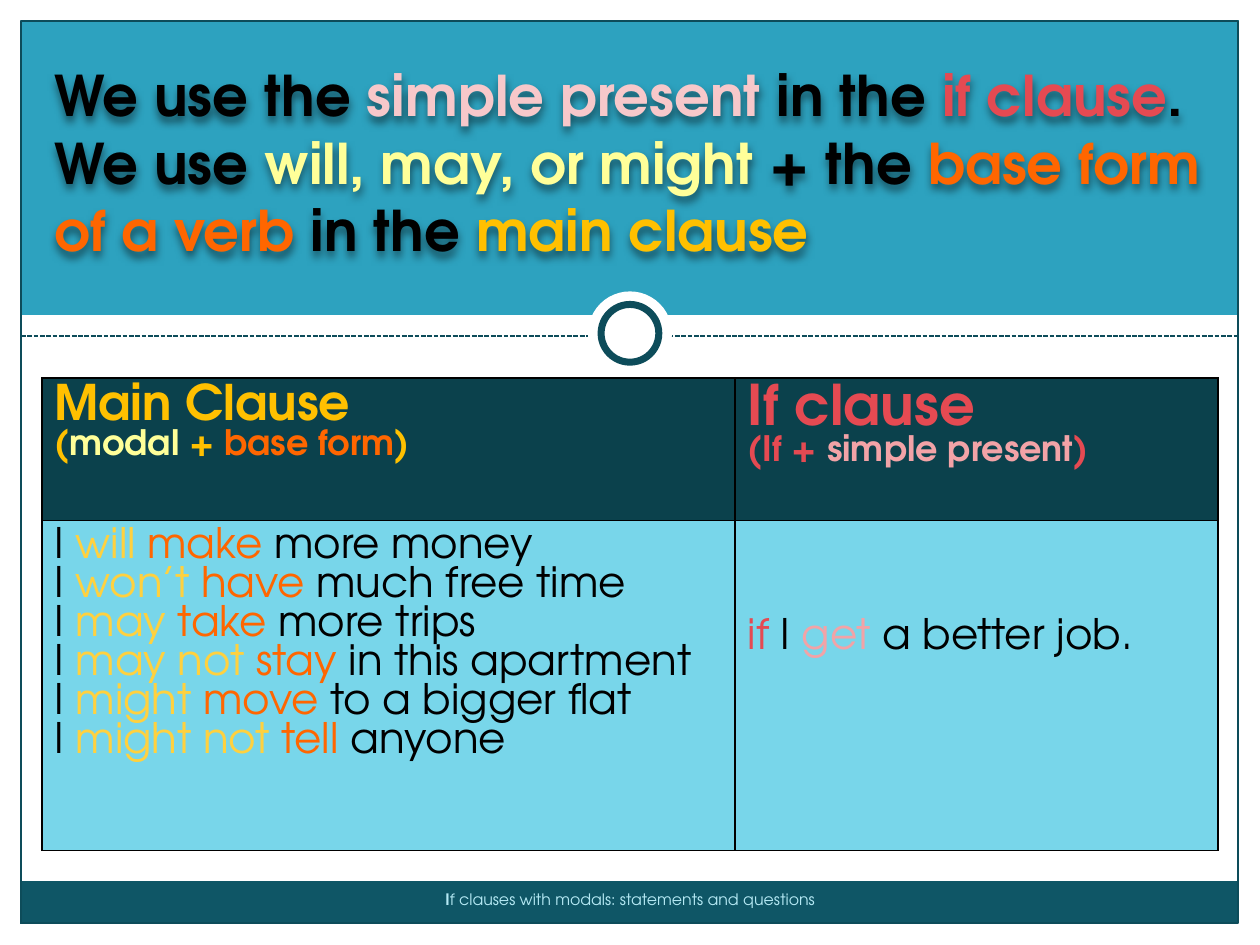
from lxml import etree
from pptx import Presentation
from pptx.dml.color import RGBColor
from pptx.enum.dml import MSO_LINE
from pptx.enum.shapes import MSO_CONNECTOR, MSO_SHAPE
from pptx.enum.text import PP_ALIGN
from pptx.oxml import parse_xml
from pptx.oxml.ns import nsdecls, qn
from pptx.util import Pt

RECT, OVAL = MSO_SHAPE.RECTANGLE, MSO_SHAPE.OVAL
STRAIGHT = MSO_CONNECTOR.STRAIGHT
DASH = MSO_LINE.SQUARE_DOT
CENTER = PP_ALIGN.CENTER
FONT = "TeX Gyre Adventor"

COLORS = {
    "white": "FFFFFF", "black": "000000", "banner": "2DA2BF",
    "footer": "0F5666", "edge": "0D4C5A", "head": "0B414C", "body": "78D6EA",
    "present": "F7C8CA", "get": "F2A3A7", "if": "E54A52",
    "modal": "FFFF99", "modal_body": "FFD13F", "verb": "FF6600",
    "main": "FFC000", "footer_text": "B5E9F4",
}

RULES = [
    [("We use the ", "black"), ("simple present ", "present"),
     ("in the ", "black"), ("if clause", "if"), (".", "black")],
    [("We use ", "black"), ("will, may, or might ", "modal"),
     ("+ the ", "black"), ("base form of a verb", "verb"),
     (" in the ", "black"), ("main clause", "main")],
]
MAIN_HEAD = [
    [("Main Clause", "main")],
    [("(", "main"), ("modal ", "modal"), ("+ ", "main"),
     ("base form", "verb"), (")", "main")],
]
IF_HEAD = [
    [("If clause", "if")],
    [("(If + ", "if"), ("simple present", "get"), (")", "if")],
]
EXAMPLES = [
    ("will ", "make", " more money"),
    ("won’t ", "have", " much free time"),
    ("may ", "take", " more trips"),
    ("may not ", "stay", " in this apartment"),
    ("might ", "move", " to a bigger flat"),
    ("might not ", "tell ", "anyone"),
]
IF_EXAMPLE = [[("if", "if"), (" I ", "black"), ("get", "get"),
               (" a better job.", "black")]]


def rgb(name):
    return RGBColor.from_string(COLORS[name])


def add_block(slide, kind, box, fill=None, line=None, width=0.75):
    block = slide.shapes.add_shape(kind, *map(Pt, box))
    block.shadow.inherit = False
    if fill:
        block.fill.solid()
        block.fill.fore_color.rgb = rgb(fill)
    else:
        block.fill.background()
    if line:
        block.line.color.rgb = rgb(line)
        block.line.width = Pt(width)
    else:
        block.line.fill.background()


def add_divider(slide, left, right, y):
    divider = slide.shapes.add_connector(STRAIGHT, Pt(left), Pt(y), Pt(right), Pt(y))
    divider.line.color.rgb = rgb("edge")
    divider.line.width = Pt(0.9)
    divider.line.dash_style = DASH
    etree.SubElement(divider._element.spPr, qn("a:effectLst"))


def write_lines(frame, lines, sizes, bold=False):
    """Fill a text frame with paragraphs of (text, colour) runs."""
    for i, (line, size) in enumerate(zip(lines, sizes)):
        paragraph = frame.paragraphs[0] if i == 0 else frame.add_paragraph()
        paragraph.font.name = FONT
        paragraph.font.size = Pt(size)
        paragraph.font.bold = bold
        for text, color in line:
            run = paragraph.add_run()
            run.text = text
            run.font.color.rgb = rgb(color)


def add_text(slide, box, lines, size, bold=False):
    text_box = slide.shapes.add_textbox(*map(Pt, box))
    text_box.text_frame.word_wrap = True
    write_lines(text_box.text_frame, lines, [size] * len(lines), bold)
    return text_box


def add_text_shadow(text_box):
    """An unfilled box casts its shadow from the letters."""
    text_box._element.spPr.append(parse_xml(
        f'<a:effectLst {nsdecls("a")}><a:outerShdw blurRad="50800" dist="38100" '
        f'dir="5400000" algn="t"><a:srgbClr val="{COLORS["black"]}">'
        '<a:alpha val="50000"/></a:srgbClr></a:outerShdw></a:effectLst>'))


def fill_cell(cell, fill, lines, sizes, bold=False, top=3.6):
    write_lines(cell.text_frame, lines, sizes, bold)
    cell.margin_top = Pt(top)
    properties = cell._tc.get_or_add_tcPr()
    for side in ("lnL", "lnR", "lnT", "lnB"):
        properties.append(parse_xml(
            f'<a:{side} {nsdecls("a")} w="12700"><a:solidFill>'
            f'<a:srgbClr val="{COLORS["black"]}"/></a:solidFill></a:{side}>'))
    cell.fill.solid()
    cell.fill.fore_color.rgb = rgb(fill)


def add_clause_table(slide):
    table = slide.shapes.add_table(2, 2, Pt(24), Pt(216), Pt(672), Pt(270)).table
    for column, width in zip(table.columns, (396, 276)):
        column.width = Pt(width)
    for row, height in zip(table.rows, (81.5, 188.5)):
        row.height = Pt(height)
    examples = [[("I ", "black"), (modal, "modal_body"), (verb, "verb"), (rest, "black")]
                for modal, verb, rest in EXAMPLES]
    fill_cell(table.cell(0, 0), "head", MAIN_HEAD, (28, 20), bold=True)
    fill_cell(table.cell(0, 1), "head", IF_HEAD, (32, 20), bold=True)
    fill_cell(table.cell(1, 0), "body", examples, [24] * len(examples))
    fill_cell(table.cell(1, 1), "body", IF_EXAMPLE, [24], top=56)


def main():
    prs = Presentation()
    prs.slide_width, prs.slide_height = Pt(720), Pt(540)
    slide = prs.slides.add_slide(prs.slide_layouts[6])

    # White margins and the band behind the divider
    for box in ((0, 528, 720, 12), (0, 0, 720, 12), (708, 0, 12, 540),
                (12, 180, 696, 24)):
        add_block(slide, RECT, box, "white")

    # Banner, footer bar and frame
    add_block(slide, RECT, (12, 11.5, 696, 168.5), "banner")
    add_block(slide, RECT, (11.5, 503.5, 696, 24.5), "footer")
    add_block(slide, RECT, (12, 12, 695.5, 515.5), line="edge")

    # Dashed divider with ring
    add_divider(slide, 12, 708, 192)
    add_block(slide, OVAL, (336, 166.5, 48, 48), "white")
    add_block(slide, OVAL, (343.5, 174, 33, 33), "white", "edge", 4)

    # Grammar rules
    rules = add_text(slide, (24, 31.2, 684, 147.5), RULES, 32, bold=True)
    add_text_shadow(rules)

    # Footer title
    footer = add_text(slide, (138, 505, 444, 23), [[
        ("I", "footer_text"),
        ("f clauses with modals: statements and questions", "footer_text")]], 9)
    footer_line = footer.text_frame.paragraphs[0]
    footer_line.alignment = CENTER
    footer_line.runs[0].font.bold = True

    # Clauses and examples
    add_clause_table(slide)
    prs.save("out.pptx")


if __name__ == "__main__":
    main()
